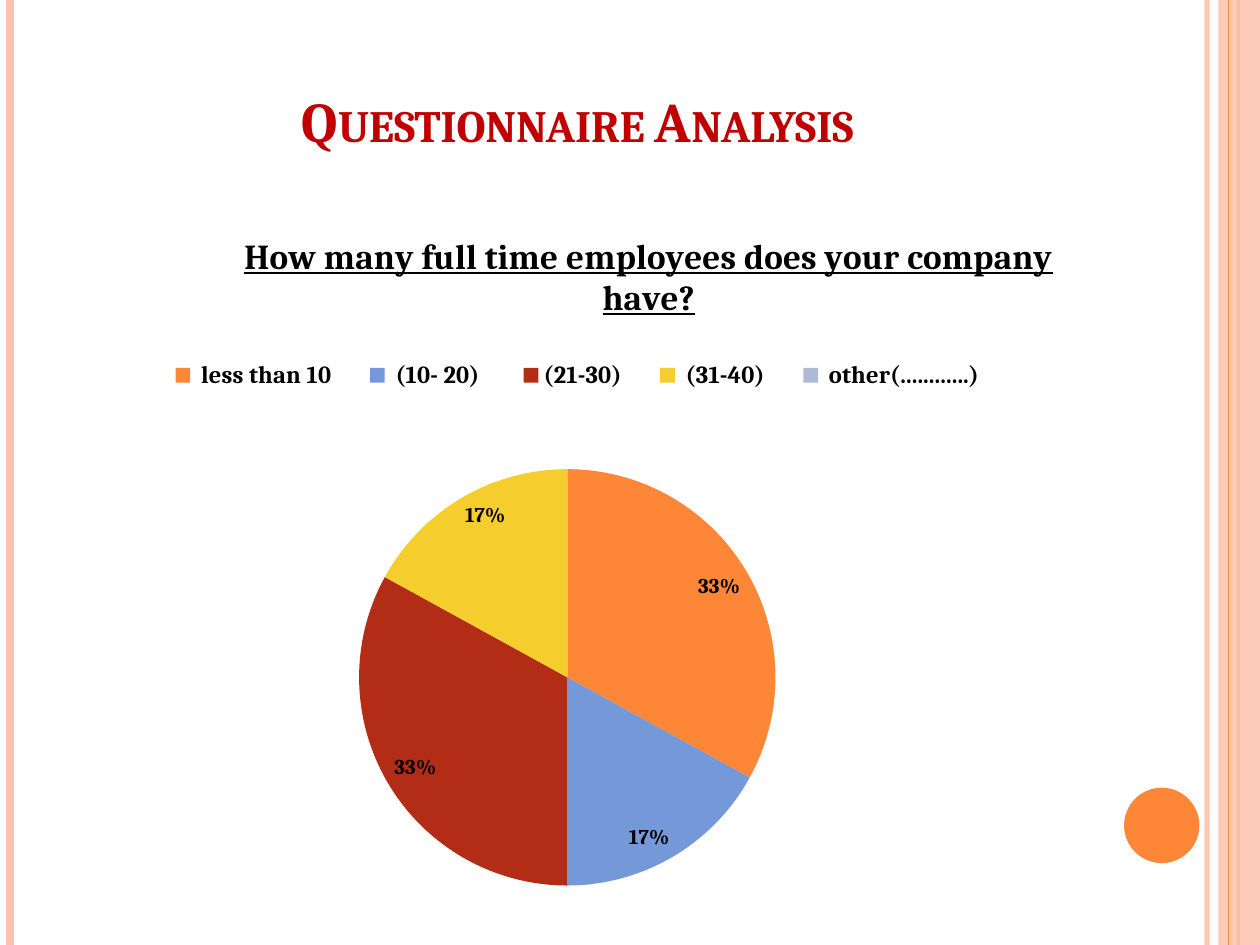
from dataclasses import dataclass

from lxml import etree
from pptx import Presentation
from pptx import util as u
from pptx.chart.data import CategoryChartData
from pptx.dml.color import RGBColor
from pptx.enum import chart as ch, shapes, text
from pptx.oxml.ns import qn

FACE = "Cambria"
WIDE, HIGH = 25.4, 19.05
PINK, ORANGE = "FEC3AE", "FE8637"


@dataclass
class Rule:
    x: float
    hue: str
    width: float
    alpha: int = 100


@dataclass
class Slice:
    name: str
    value: int
    hue: str


RULES = [
    Rule(24.33, PINK, 3, 93),
    Rule(0.2, PINK, 4.5),
    Rule(24.97, ORANGE, 1.5),
]
TOP_RULE = Rule(24.77, ORANGE, 0.75)

SLICES = [
    Slice(" less than 10", 33, ORANGE),
    Slice(" (10- 20) ", 17, "7598D9"),
    Slice("(21-30)", 33, "B32C16"),
    Slice(" (31-40)", 17, "F5CD2D"),
    Slice(" other(............)", 0, "AEBAD5"),
]


def paint(fill, hue: str, alpha: int = 100) -> None:
    fill.solid()
    fill.fore_color.rgb = RGBColor.from_string(hue)
    if alpha < 100:
        tint = next(fill._xPr.iter(qn("a:srgbClr")))
        etree.SubElement(tint, qn("a:alpha"), val=str(alpha * 1000))


def style(font, size: float, hue: str = "000000", bold: bool = True) -> None:
    font.name = FACE
    font.size = u.Pt(size)
    font.bold = bold
    paint(font.fill, hue)


def draw_rule(slide, rule: Rule) -> None:
    x = u.Cm(rule.x)
    line = slide.shapes.add_connector(
        shapes.MSO_CONNECTOR.STRAIGHT, x, 0, x, u.Cm(HIGH))
    line.line.width = u.Pt(rule.width)
    paint(line.line.fill, rule.hue, rule.alpha)
    etree.SubElement(line._element.spPr, qn("a:effectLst"))


def draw_shape(slide, kind, box: tuple, hue: str, alpha: int = 100) -> None:
    shape = slide.shapes.add_shape(kind, *map(u.Cm, box))
    shape.shadow.inherit = False
    shape.line.fill.background()
    paint(shape.fill, hue, alpha)


def set_title(slide) -> None:
    title = slide.shapes.title
    title.left, title.top, title.width, title.height = map(
        u.Cm, (1.27, 0.05, 20.75, 3.18))
    frame = title.text_frame
    frame.text = "Questionnaire Analysis"
    frame.vertical_anchor = text.MSO_ANCHOR.BOTTOM
    para = frame.paragraphs[0]
    para.alignment = text.PP_ALIGN.CENTER
    style(para.font, 32, "C00000")
    para.font._element.set("cap", "small")


def place(part, index: int, inner: bool = False, **box: float) -> None:
    """Give a chart part a manual layout, as fractions of the chart."""
    for old in part.findall(qn("c:layout")):
        part.remove(old)
    layout = etree.Element(qn("c:layout"))
    part.insert(index, layout)
    manual = etree.SubElement(layout, qn("c:manualLayout"))
    if inner:
        etree.SubElement(manual, qn("c:layoutTarget"), val="inner")
    for mode in ("xMode", "yMode"):
        etree.SubElement(manual, qn("c:" + mode), val="edge")
    for key, value in box.items():
        etree.SubElement(manual, qn("c:" + key), val=str(value))


def draw_pie(slide) -> None:
    data = CategoryChartData()
    data.categories = [part.name for part in SLICES]
    data.add_series("Series 1", [part.value for part in SLICES])
    box = map(u.Cm, (1.27, 4.45, 20.75, 13.54))
    chart = slide.shapes.add_chart(
        ch.XL_CHART_TYPE.PIE, *box, data).chart
    style(chart.font, 10, bold=False)

    frame = chart.chart_title.text_frame
    frame.text = "How many full time employees does your company have?"
    font = frame.paragraphs[0].font
    style(font, 20)
    font.underline = True
    place(chart.chart_title._element, 1, x=0.17, y=0.01)

    chart.has_legend = True
    legend = chart.legend
    legend.position = ch.XL_LEGEND_POSITION.TOP
    legend.include_in_layout = False
    style(legend.font, 14)
    place(legend._element, 1, x=0.08, y=0.18, w=0.84, h=0.1)

    plot = chart.plots[0]
    plot.vary_by_categories = True
    place(plot._element.getparent(), 0, True, x=0.07, y=0.37, w=0.84, h=0.62)
    series = plot.series[0]
    for i, part in enumerate(SLICES):
        point = series.points[i].format
        paint(point.fill, part.hue)
        point.line.fill.background()
        if not part.value:
            label = series.points[i].data_label._get_or_add_dLbl()
            for child in list(label)[1:]:
                label.remove(child)
            etree.SubElement(label, qn("c:delete"), val="1")

    labels = series.data_labels
    labels.show_value = False
    labels.show_percentage = True
    labels.number_format = "0%"
    labels.number_format_is_linked = False
    labels.position = ch.XL_LABEL_POSITION.INSIDE_END
    style(labels.font, 12)


def main() -> None:
    deck = Presentation()
    deck.slide_width, deck.slide_height = u.Cm(WIDE), u.Cm(HIGH)
    slide = deck.slides.add_slide(deck.slide_layouts[5])
    paint(slide.background.fill, "FFFFFF")
    for rule in RULES:
        draw_rule(slide, rule)
    kind = shapes.MSO_SHAPE
    draw_shape(slide, kind.RECTANGLE, (24.56, 0, 0.84, HIGH), PINK, 87)
    draw_rule(slide, TOP_RULE)
    draw_shape(slide, kind.OVAL, (22.66, 15.88, 1.52, 1.52), ORANGE)
    set_title(slide)
    draw_pie(slide)
    deck.save("out.pptx")


if __name__ == "__main__":
    main()
